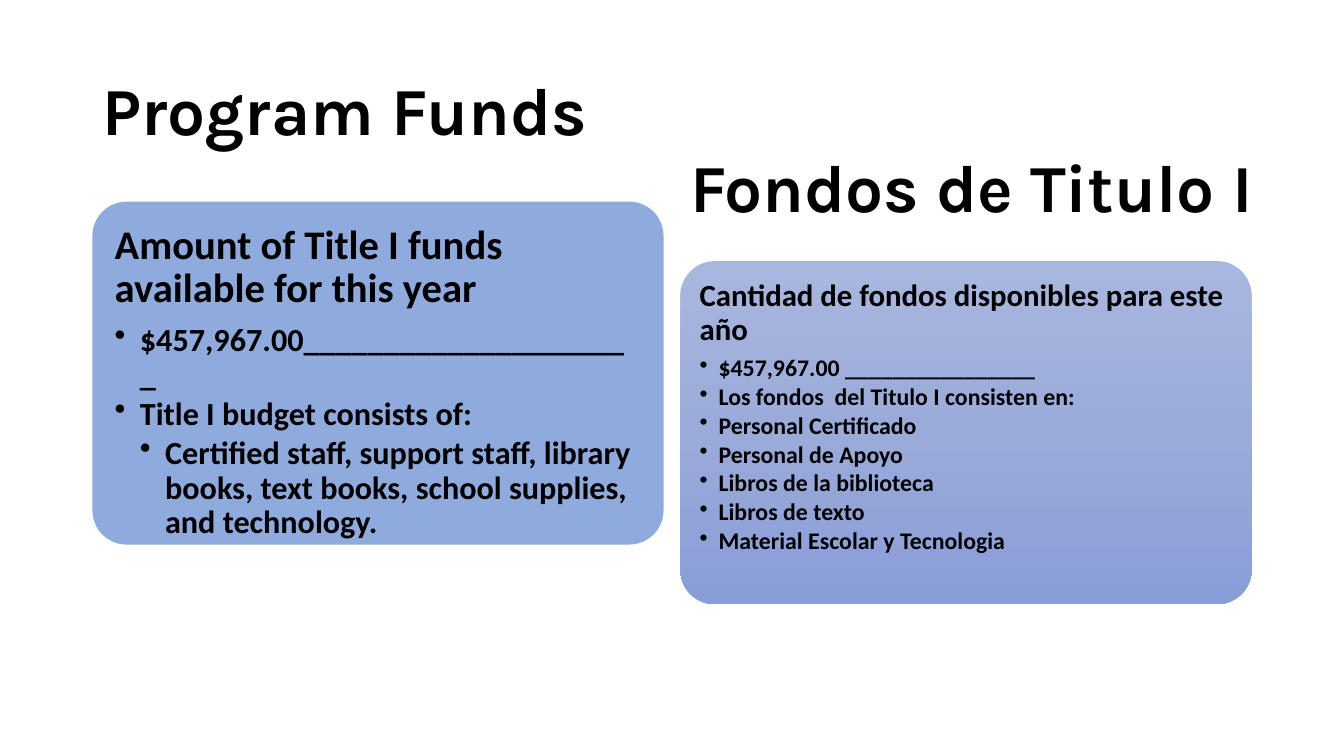
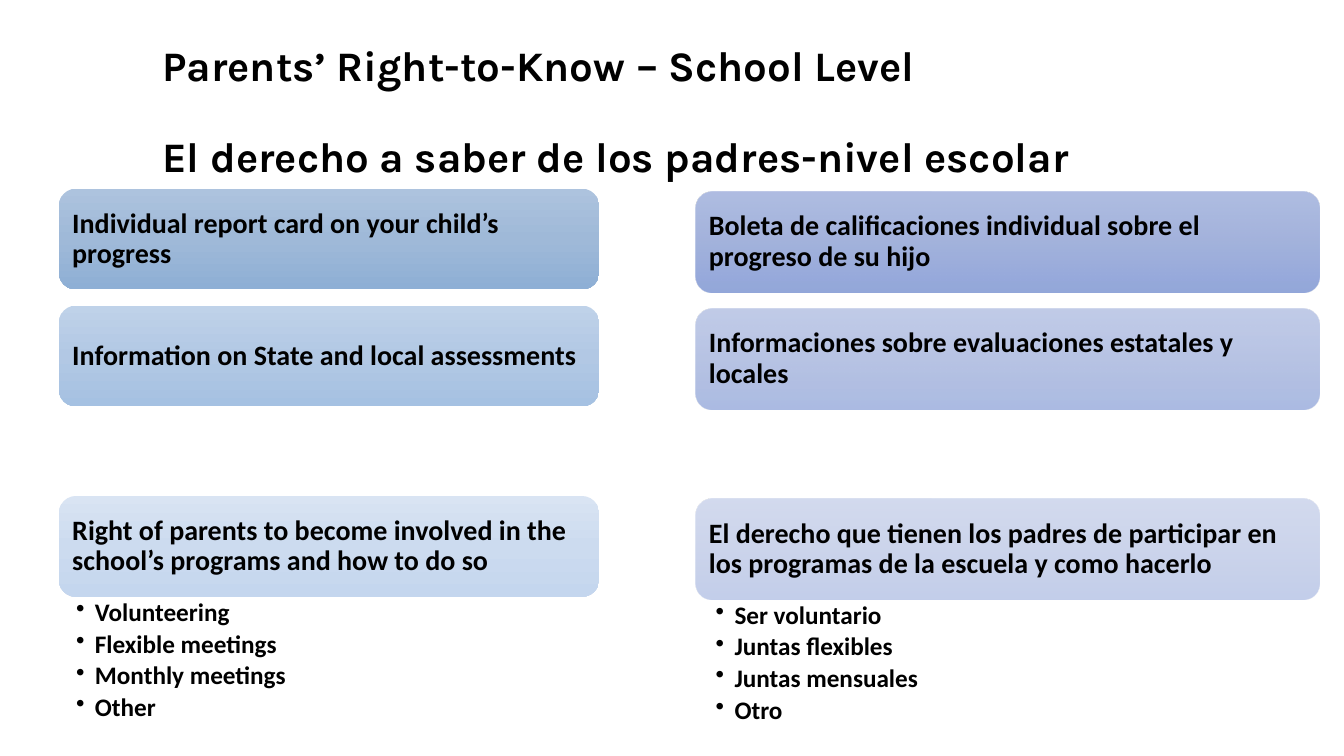
"""Build two bilingual slides on Title I funds and parents' right to know."""
from dataclasses import dataclass

from pptx import Presentation
from pptx.dml.color import RGBColor
from pptx.enum.shapes import MSO_SHAPE
from pptx.enum.text import MSO_ANCHOR, PP_ALIGN
from pptx.oxml import parse_xml
from pptx.oxml.ns import nsdecls
from pptx.util import Pt

ROUNDED = MSO_SHAPE.ROUNDED_RECTANGLE
TOP, MIDDLE = MSO_ANCHOR.TOP, MSO_ANCHOR.MIDDLE
LEFT = PP_ALIGN.LEFT
TITLE_ONLY = 5


@dataclass(frozen=True)
class Theme:
    """Colours, fonts and type sizes of both slides."""
    ink: str = "000000"
    blue: tuple = ("8FAADC",)
    steel: tuple = ("ADC3DE", "9FB9D8", "8EAFD5")
    sky: tuple = ("BFD2E9", "B2C8E4", "A5C1E2")
    mist: tuple = ("D9E4F3", "CCDBEF", "C4D6EE")
    periwinkle: tuple = ("A8B7DF", "9AABD9", "889ED7")
    title_font: str = "Karla"
    body_font: str = "Calibri"
    title_size: float = 48
    long_title_size: float = 30
    row_size: float = 20
    list_size: float = 18
    line_spacing: float = 0.9


THEME = Theme()
SLIDE_SIZE = (960, 540)

FUND_TITLE = {"text": "Program Funds", "box": (66, 29, 414, 104)}
FUND_SUBTITLE = {"text": "Fondos de Titulo I", "box": (486, 100, 460, 65)}
FUND_CARD_SIZE = (408, 245)
FUND_CARDS = [
    {
        "at": (66, 144), "colours": THEME.blue, "inset": 8.8,
        "heading_size": 29, "item_size": 23, "indent": 18,
        "heading": "Amount of Title I funds available for this year",
        "items": [
            (1, "$457,967.00_____________________"),
            (1, "Title I budget consists of:"),
            (2, "Certified staff, support staff, library books, text books, "
                "school supplies, and technology."),
        ],
    },
    {
        "at": (486, 186.5), "colours": THEME.periwinkle, "inset": 6.6,
        "heading_size": 22, "item_size": 17, "indent": 13.5,
        "heading": "Cantidad de fondos disponibles para este año",
        "items": [
            (1, "$457,967.00 ________________"),
            (1, "Los fondos  del Titulo I consisten en:"),
            (1, "Personal Certificado"),
            (1, "Personal de Apoyo"),
            (1, "Libros de la biblioteca"),
            (1, "Libros de texto"),
            (1, "Material Escolar y Tecnologia"),
        ],
    },
]

RIGHTS_TITLE = {
    "lines": ["Parents’ Right-to-Know – School Level",
              "El derecho a saber de los padres-nivel escolar"],
    "box": (108.7, 30, 742, 102), "gap": 33,
}
ROW_HEIGHT = 72
ROW_GAPS = (11.5, 64, 0)
LIST_HEIGHT = 98
RIGHTS_COLUMNS = [
    {
        "left": 42, "top": 134.8, "width": 386, "list_inset": 12.3,
        "rows": [
            ("Individual report card on your child’s progress", THEME.steel, 100),
            ("Information on State and local assessments", THEME.sky, 100),
            ("Right of parents to become involved in the school’s programs "
             "and how to do so", THEME.mist, 100),
        ],
        "items": ["Volunteering", "Flexible meetings", "Monthly meetings", "Other"],
    },
    {
        "left": 496.8, "top": 136.8, "width": 445.7, "list_inset": 14.4,
        "rows": [
            ("Boleta de calificaciones individual sobre el progreso de su hijo",
             THEME.periwinkle, 90),
            ("Informaciones sobre evaluaciones estatales y locales",
             THEME.periwinkle, 70),
            ("El derecho que tienen los padres de participar en los programas "
             "de la escuela y como hacerlo", THEME.periwinkle, 50),
        ],
        "items": ["Ser voluntario", "Juntas flexibles", "Juntas mensuales", "Otro"],
    },
]


def add_text(frame, text, *, size, font=THEME.body_font, colour=THEME.ink,
             spacing=THEME.line_spacing, before=0, after=0, level=0, indent=0):
    """Write one bold paragraph, bulleted when it has a level."""
    paragraph = frame.paragraphs[0]
    if paragraph.runs:
        paragraph = frame.add_paragraph()
    paragraph.alignment = LEFT
    paragraph.level = level
    paragraph.line_spacing = spacing
    paragraph.space_before = Pt(before)
    paragraph.space_after = Pt(round(after * size, 1))
    if level:
        properties = paragraph._p.get_or_add_pPr()
        properties.set("marL", str(Pt(indent * level)))
        properties.set("indent", str(-Pt(indent)))
        properties.append(parse_xml(f'<a:buChar {nsdecls("a")} char="•"/>'))
    run = paragraph.add_run()
    run.text = text
    run.font.name = font
    run.font.size = Pt(size)
    run.font.bold = True
    run.font.color.rgb = RGBColor.from_string(colour)


def set_frame(frame, anchor, side=7.2, edge=3.6):
    """Wrap a text frame and set its anchor and margins."""
    frame.word_wrap = True
    frame.vertical_anchor = anchor
    frame.margin_left = frame.margin_right = Pt(side)
    frame.margin_top = frame.margin_bottom = Pt(edge)
    return frame


def add_title_slide(presentation, box):
    """Add a title-only slide and return it with its title frame."""
    slide = presentation.slides.add_slide(presentation.slide_layouts[TITLE_ONLY])
    title = slide.shapes.title
    title.left, title.top, title.width, title.height = map(Pt, box)
    return slide, set_frame(title.text_frame, MIDDLE)


def add_text_box(slide, box, **margins):
    """Add a wrapped text box and return its frame."""
    shape = slide.shapes.add_textbox(*map(Pt, box))
    return set_frame(shape.text_frame, TOP, **margins)


def fill_gradient(shape, colours, opacity):
    """Fill a shape from top to bottom with evenly spaced colours."""
    step = 100000 // (len(colours) - 1)
    stops = "".join(
        f'<a:gs pos="{index * step}"><a:srgbClr val="{colour}">'
        f'<a:alpha val="{opacity * 1000}"/></a:srgbClr></a:gs>'
        for index, colour in enumerate(colours))
    gradient = parse_xml(
        f'<a:gradFill {nsdecls("a")} rotWithShape="1"><a:gsLst>{stops}</a:gsLst>'
        '<a:lin ang="5400000" scaled="0"/></a:gradFill>')
    shape.fill.background()
    properties = shape.fill._xPr
    properties.replace(properties.eg_fillProperties, gradient)


def add_card(slide, box, colours, *, anchor, inset, opacity=100, corner=0.17):
    """Add a rounded card and return its text frame."""
    shape = slide.shapes.add_shape(ROUNDED, *map(Pt, box))
    shape.adjustments[0] = corner
    shape.shadow.inherit = False
    if len(colours) > 1:
        fill_gradient(shape, colours, opacity)
    else:
        shape.fill.solid()
        shape.fill.fore_color.rgb = RGBColor.from_string(colours[0])
    shape.line.fill.background()
    return set_frame(shape.text_frame, anchor, inset, inset)


def build_funds(presentation):
    """Build the slide with one funds card per language."""
    slide, title = add_title_slide(presentation, FUND_TITLE["box"])
    add_text(title, FUND_TITLE["text"], size=THEME.title_size, font=THEME.title_font)
    for card in FUND_CARDS:
        frame = add_card(slide, card["at"] + FUND_CARD_SIZE, card["colours"],
                         anchor=TOP, inset=card["inset"], corner=0.1)
        add_text(frame, card["heading"], size=card["heading_size"], after=0.3)
        for level, item in card["items"]:
            add_text(frame, item, size=card["item_size"], after=0.13,
                     level=level, indent=card["indent"])
    subtitle = add_text_box(slide, FUND_SUBTITLE["box"])
    add_text(subtitle, FUND_SUBTITLE["text"], size=THEME.title_size,
             font=THEME.title_font, spacing=1.0)


def build_rights(presentation):
    """Build the slide with one column of rights per language."""
    slide, title = add_title_slide(presentation, RIGHTS_TITLE["box"])
    for index, line in enumerate(RIGHTS_TITLE["lines"]):
        add_text(title, line, size=THEME.long_title_size, font=THEME.title_font,
                 before=index * RIGHTS_TITLE["gap"])
    for column in RIGHTS_COLUMNS:
        left, top, width = column["left"], column["top"], column["width"]
        for (text, colours, opacity), gap in zip(column["rows"], ROW_GAPS):
            frame = add_card(slide, (left, top, width, ROW_HEIGHT), colours,
                             anchor=MIDDLE, inset=6, opacity=opacity)
            add_text(frame, text, size=THEME.row_size, after=0.35)
            top += ROW_HEIGHT + gap
        frame = add_text_box(slide, (left, top, width, LIST_HEIGHT),
                             side=column["list_inset"], edge=2)
        for item in column["items"]:
            add_text(frame, item, size=THEME.list_size, after=0.18,
                     level=1, indent=13.5)


def main():
    """Build and save the presentation."""
    presentation = Presentation()
    presentation.slide_width, presentation.slide_height = map(Pt, SLIDE_SIZE)
    build_funds(presentation)
    build_rights(presentation)
    presentation.save("out.pptx")


if __name__ == "__main__":
    main()
